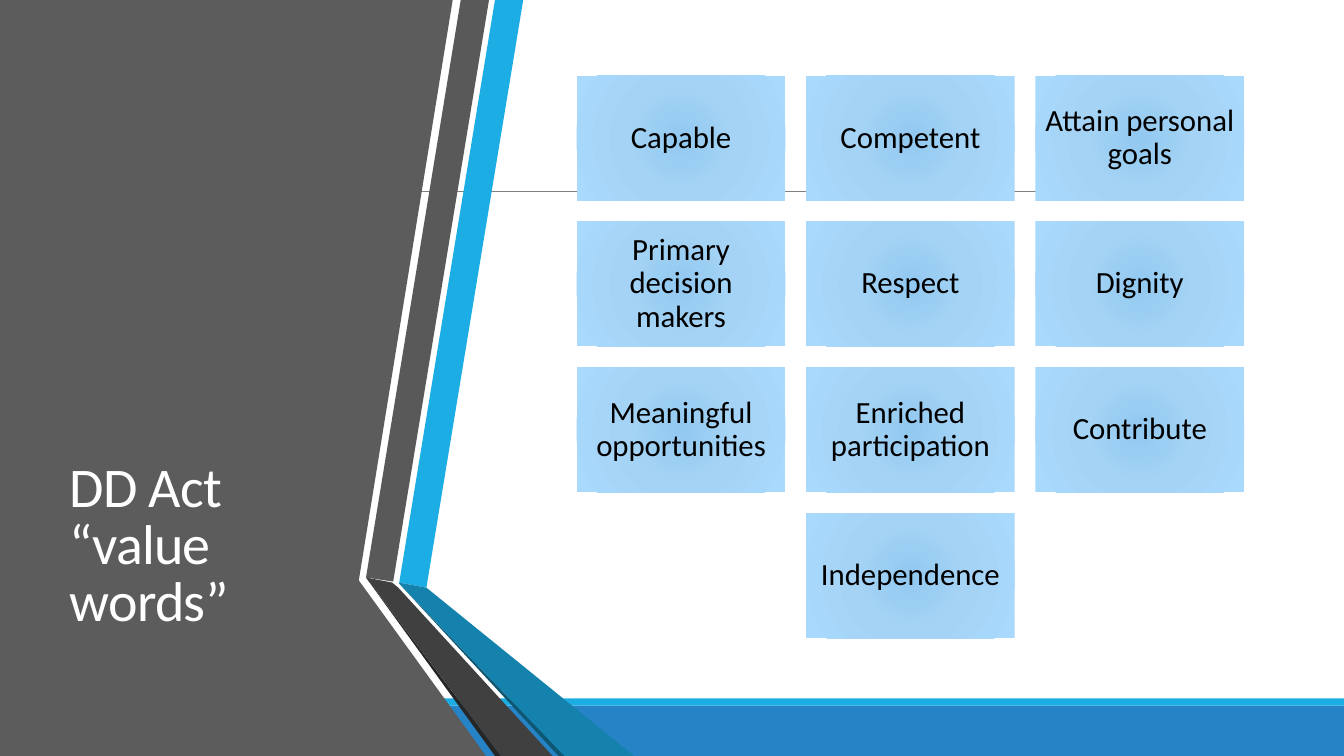
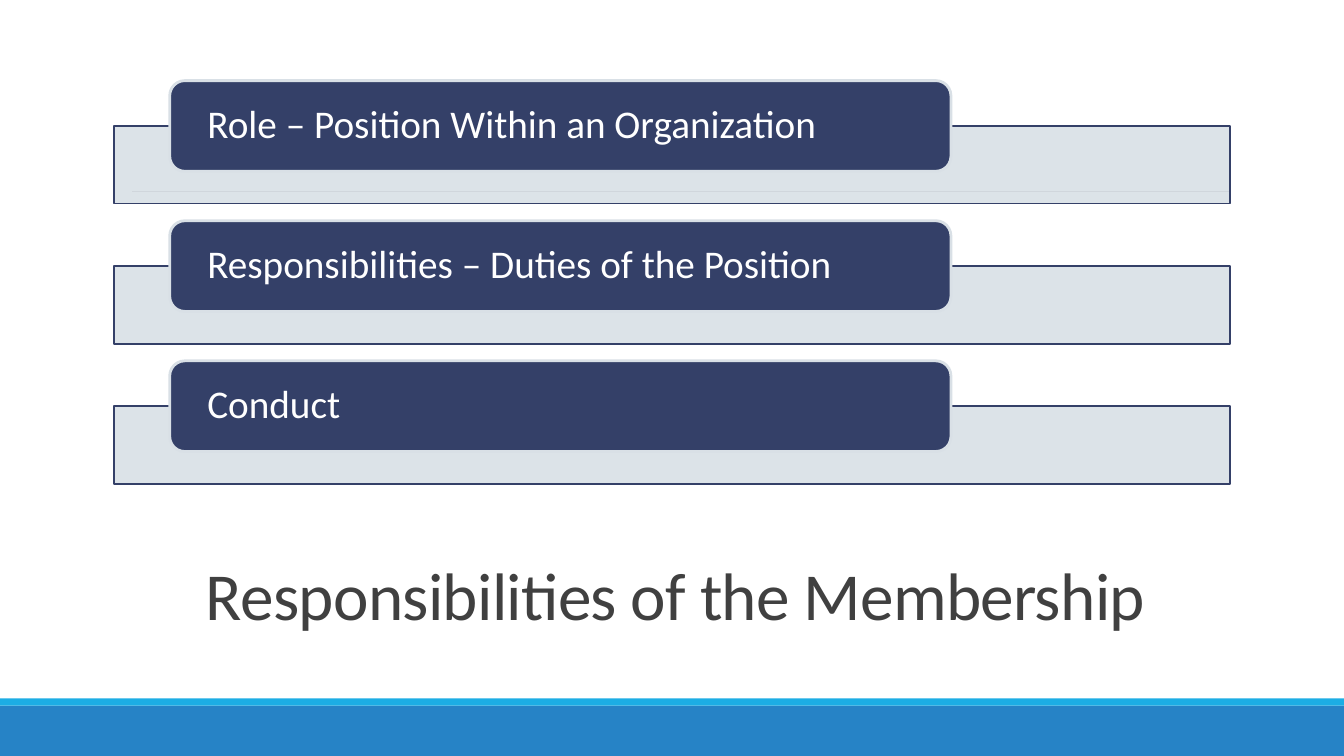
from lxml.etree import SubElement
from pptx import Presentation
from pptx.dml.color import RGBColor
from pptx.enum.shapes import MSO_CONNECTOR, MSO_SHAPE
from pptx.enum.text import MSO_ANCHOR, MSO_AUTO_SIZE, PP_ALIGN
from pptx.oxml import parse_xml
from pptx.oxml.ns import nsdecls, qn
from pptx.util import Inches, Pt

WHITE = RGBColor(0xFF, 0xFF, 0xFF)
BLACK = RGBColor(0x00, 0x00, 0x00)
BLUE = RGBColor(0x26, 0x83, 0xC6)
CYAN = RGBColor(0x1C, 0xAD, 0xE4)
TEAL = RGBColor(0x14, 0x82, 0xAC)
DARK_TEAL = RGBColor(0x0E, 0x57, 0x72)
RULE_GREY = RGBColor(0x80, 0x80, 0x80)
PANEL_GREY = RGBColor(0x5C, 0x5C, 0x5C)
STRIPE_GREY = RGBColor(0x59, 0x59, 0x59)
TITLE_GREY = RGBColor(0x40, 0x40, 0x40)
NEAR_BLACK = RGBColor(0x26, 0x26, 0x26)
NAVY = RGBColor(0x34, 0x40, 0x68)
PALE = RGBColor(0xD9, 0xE0, 0xE6)
TILE_STOPS = ((0, RGBColor(0x92, 0xC9, 0xF0)),
              (45, RGBColor(0xA4, 0xD3, 0xF5)),
              (100, RGBColor(0xA9, 0xD9, 0xFD)))

FONT = "Calibri"
SLIDE_W, SLIDE_H = 13.33, 7.5

PANEL = [(0, 0), (3.53, 0), (4.49, 0), (3.56, 5.75), (3.56, 5.76), (4.82, 7.5), (0, 7.5)]
RIBBONS = (
    (CYAN, [(3.96, 5.78), (4.23, 5.83), (5.19, 0), (4.91, 0)]),
    (STRIPE_GREY, [(4.85, 0), (4.57, 0), (3.63, 5.73), (3.9, 5.77)]),
    (NEAR_BLACK, [(3.63, 5.73), (4.91, 7.5), (4.97, 7.5)]),
    (DARK_TEAL, [(3.96, 5.79), (5.54, 7.5), (5.6, 7.5)]),
    (TEAL, [(3.96, 5.79), (5.6, 7.5), (6.29, 7.5), (4.23, 5.83), (3.96, 5.78)]),
    (TITLE_GREY, [(5.48, 7.5), (3.95, 5.83), (3.89, 5.78), (3.63, 5.73), (4.97, 7.5)]),
)
VALUES = ["Capable", "Competent", "Attain personal goals",
          "Primary decision makers", "Respect", "Dignity",
          "Meaningful opportunities", "Enriched participation", "Contribute",
          "Independence"]
DUTIES = ["Role – Position Within an Organization",
          "Responsibilities – Duties of the Position",
          "Conduct"]


def assign(obj, values):
    """Set each attribute of obj named in values."""
    for name, value in values.items():
        setattr(obj, name, value)


def paint(sp, fill, line=None, width=0):
    """Give a shape a solid fill, an optional outline and no shadow."""
    sp.shadow.inherit = False
    sp.fill.solid()
    sp.fill.fore_color.rgb = fill
    if line is None:
        sp.line.fill.background()
    else:
        sp.line.color.rgb = line
        sp.line.width = Pt(width)


def add_box(s, kind, box, fill, line=None, width=0):
    """Add a painted preset shape in a box given in inches."""
    sp = s.shapes.add_shape(kind, *map(Inches, box))
    paint(sp, fill, line, width)
    return sp


def add_outline(s, left, top, points, fill):
    """Add a closed filled polygon, offset from left and top."""
    pts = [(Inches(left + x), Inches(top + y)) for x, y in points]
    fb = s.shapes.build_freeform(*pts[0], scale=1.0)
    fb.add_line_segments(pts[1:], close=True)
    paint(fb.convert_to_shape(), fill)


def write(sp, text, size, color, align, spacing, frame):
    """Write one formatted paragraph into a shape."""
    tf = sp.text_frame
    assign(tf, {"word_wrap": True, "auto_size": MSO_AUTO_SIZE.NONE,
                "vertical_anchor": MSO_ANCHOR.MIDDLE, **frame})
    p = tf.paragraphs[0]
    assign(p, {"alignment": align, "line_spacing": spacing})
    r = p.add_run()
    r.text = text
    assign(r.font, {"name": FONT, "size": Pt(size)})
    r.font.color.rgb = color
    return r


def set_title(s, box, text, size, color, align, anchor):
    """Place the title placeholder in front and fill it."""
    sp = s.shapes.title
    sp.element.getparent().append(sp.element)
    assign(sp, dict(zip(("left", "top", "width", "height"), map(Inches, box))))
    r = write(sp, text, size, color, align, 0.85, {"vertical_anchor": anchor})
    r.font._element.set("spc", "-50")


def new_slide(prs):
    """Add a title slide with the shared rule and bottom bands."""
    s = prs.slides.add_slide(prs.slide_layouts[5])
    add_box(s, MSO_SHAPE.RECTANGLE, (0, 7, SLIDE_W, 0.5), BLUE)
    add_box(s, MSO_SHAPE.RECTANGLE, (0, 6.93, SLIDE_W, 0.07), CYAN)
    ln = s.shapes.add_connector(MSO_CONNECTOR.STRAIGHT, *map(Inches, (1.31, 1.9, 12.21, 1.9)))
    ln.line.color.rgb = RULE_GREY
    ln.line.width = Pt(0.5)
    SubElement(ln.element.spPr, qn("a:effectLst"))
    return s


def side_panel(s, left, top):
    """Draw the grey panel and its folded ribbons."""
    for fill, points in ((PANEL_GREY, PANEL), *RIBBONS):
        add_outline(s, left, top, points, fill)


def radial_fill(sp, stops):
    """Replace the solid fill with a gradient from the centre outwards."""
    gs = "".join(f'<a:gs pos="{pos * 1000}"><a:srgbClr val="{c}"/></a:gs>' for pos, c in stops)
    grad = parse_xml(
        f'<a:gradFill {nsdecls("a")} rotWithShape="1"><a:gsLst>{gs}</a:gsLst>'
        '<a:path path="circle"><a:fillToRect l="50000" t="50000" r="50000" b="50000"/>'
        '</a:path></a:gradFill>')
    solid = sp.element.spPr.find(qn("a:solidFill"))
    solid.getparent().replace(solid, grad)


def value_grid(s, box, words, cols=3, tile_w=2.07, tile_h=1.24):
    """Lay tiles out in a grid, with a short last row centred."""
    left, top, width, height = box
    rows = -(-len(words) // cols)
    step_x = (width - tile_w) / (cols - 1)
    step_y = (height - tile_h) / (rows - 1)
    inset = dict.fromkeys(("margin_left", "margin_top", "margin_right", "margin_bottom"),
                          Inches(0.09))
    for i, word in enumerate(words):
        row, col = divmod(i, cols)
        in_row = min(cols, len(words) - row * cols)
        x = left + (col + (cols - in_row) / 2) * step_x
        sp = add_box(s, MSO_SHAPE.RECTANGLE, (x, top + row * step_y, tile_w, tile_h), PALE)
        radial_fill(sp, TILE_STOPS)
        write(sp, word, 22, BLACK, PP_ALIGN.CENTER, 0.9, inset)


def duty_list(s, box, duties, bar_h=0.77, label_h=0.9):
    """Stack pale bars, each with a rounded label over its top edge."""
    left, top, width, height = box
    drop = 0.45
    step = (height - drop - bar_h) / (len(duties) - 1)
    inset = {"margin_left": Inches(0.33), "margin_right": Inches(0.33),
             "margin_top": 0, "margin_bottom": 0}
    for i, duty in enumerate(duties):
        y = top + i * step
        bar = add_box(s, MSO_SHAPE.RECTANGLE, (left, y + drop, width, bar_h), PALE, NAVY, 1.25)
        clr = bar.element.spPr.find(qn("a:solidFill")).find(qn("a:srgbClr"))
        SubElement(clr, qn("a:alpha"), val="90000")
        sp = add_box(s, MSO_SHAPE.ROUNDED_RECTANGLE,
                     (left + width * 0.05, y, width * 0.7, label_h), NAVY, PALE, 2)
        write(sp, duty, 28, WHITE, PP_ALIGN.LEFT, 0.9, inset)


def values_slide(prs):
    """Build the slide of value words."""
    s = new_slide(prs)
    side_panel(s, 0, 0)
    set_title(s, (0.59, 0.75, 3.04, 5.58), "DD Act “value words”", 40, WHITE,
              PP_ALIGN.LEFT, MSO_ANCHOR.BOTTOM)
    value_grid(s, (5.72, 0.75, 6.62, 5.58), VALUES)


def duties_slide(prs):
    """Build the slide of membership responsibilities."""
    s = new_slide(prs)
    set_title(s, (1.2, 5.3, 11, 1.3), "Responsibilities of the Membership", 48, TITLE_GREY,
              PP_ALIGN.CENTER, MSO_ANCHOR.MIDDLE)
    duty_list(s, (1.13, 0.8, 11.07, 4), DUTIES)


def main():
    """Build and save the presentation."""
    prs = Presentation()
    assign(prs, {"slide_width": Inches(SLIDE_W), "slide_height": Inches(SLIDE_H)})
    values_slide(prs)
    duties_slide(prs)
    prs.save("out.pptx")


if __name__ == "__main__":
    main()
